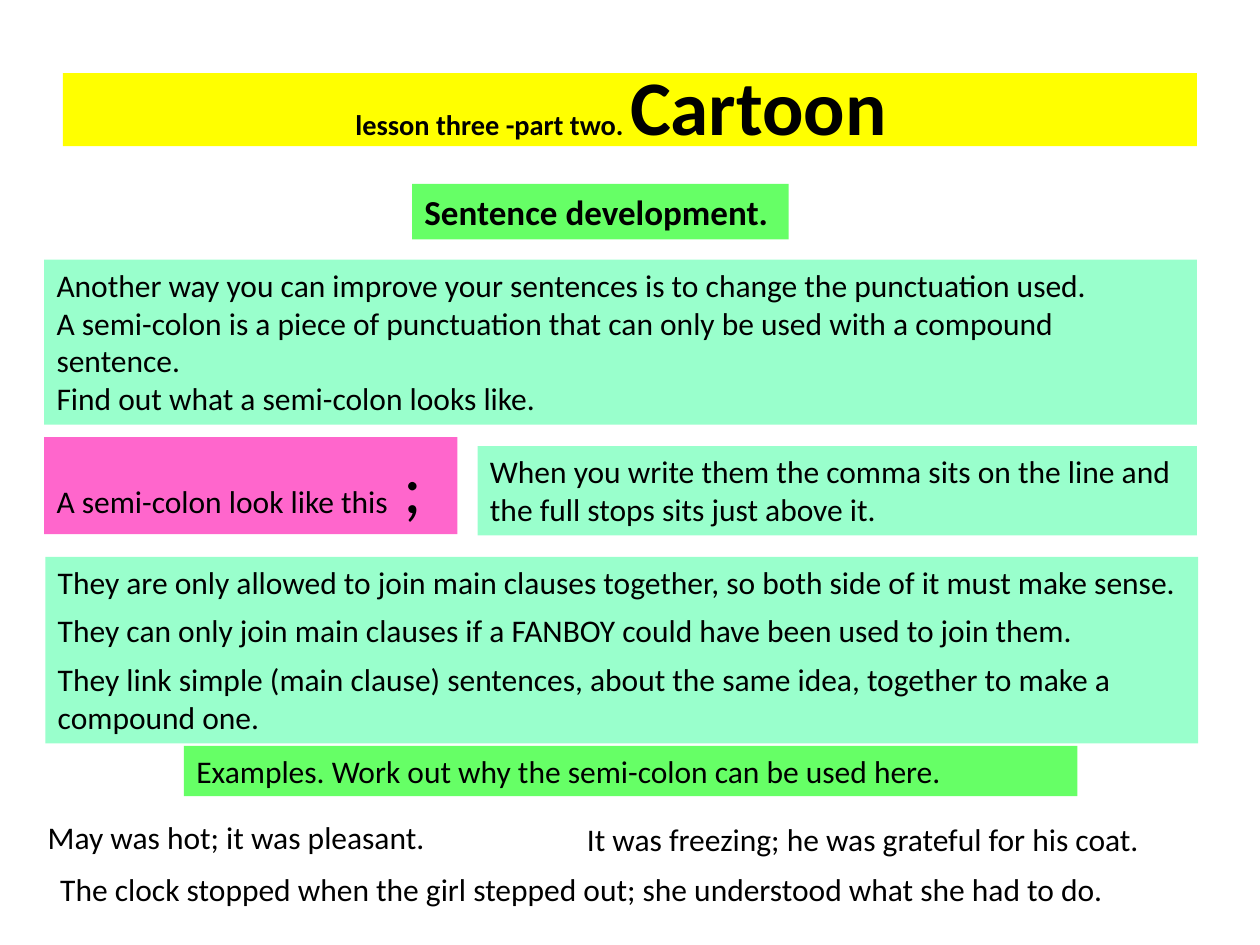
from dataclasses import dataclass
from typing import Optional

from pptx import Presentation
from pptx.dml.color import RGBColor
from pptx.enum.shapes import MSO_SHAPE
from pptx.enum.text import MSO_ANCHOR, PP_ALIGN
from pptx.slide import Slide
from pptx.util import Inches, Pt

SLIDE_WIDTH, SLIDE_HEIGHT = 10, 7.5
COLUMNS, ROWS = 100, 75


@dataclass(frozen=True)
class Theme:
    font: str = "Calibri"
    ink: str = "000000"
    yellow: str = "FFFF00"
    green: str = "66FF66"
    mint: str = "99FFCC"
    pink: str = "FF66CC"
    body: float = 18
    heading: float = 20
    lesson: float = 16.2
    topic: float = 44.1
    symbol: float = 40
    clause_gap: float = 6


THEME = Theme()


@dataclass(frozen=True)
class Phrase:
    text: str
    size: float = THEME.body


@dataclass(frozen=True)
class Panel:
    column: float
    row: float
    columns: float
    rows: float
    paragraphs: tuple[tuple[Phrase, ...], ...]
    fill: Optional[str] = None
    bold: bool = False
    centred: bool = False
    gap: float = 0
    bottom_inset: float = 0.05


def lines(*texts: str, size: float = THEME.body) -> tuple[tuple[Phrase, ...], ...]:
    return tuple((Phrase(text, size),) for text in texts)


PANELS = (
    Panel(5, 5.8, 90, 5.8,
          ((Phrase("lesson three -part two. ", THEME.lesson),
            Phrase("Cartoon ", THEME.topic)),),
          THEME.yellow, bold=True, centred=True, bottom_inset=0.13),
    Panel(32.7, 14.6, 29.9, 4.4,
          lines("Sentence development.", size=THEME.heading),
          THEME.green, bold=True),
    Panel(3.5, 20.6, 91.5, 13.1, lines(
        "Another way you can improve your sentences is to change the punctuation used.",
        "A semi-colon is a piece of punctuation that can only be used with a compound sentence.",
        "Find out what a semi-colon looks like."), THEME.mint),
    Panel(3.5, 34.7, 32.8, 7.7,
          ((Phrase("A semi-colon look like this"), Phrase(" ;", THEME.symbol)),),
          THEME.pink),
    Panel(37.9, 35.4, 57.1, 7.1, lines(
        "When you write them the comma sits on the line and "
        "the full stops sits just above it."), THEME.mint),
    Panel(3.6, 44.2, 91.5, 14.8, lines(
        "They are only allowed to join main clauses together, so both side of it must make sense.",
        "They can only join main clauses if a FANBOY could have been used to join them.",
        "They link simple (main clause) sentences, about the same idea, "
        "together to make a compound one."), THEME.mint, gap=THEME.clause_gap),
    Panel(14.6, 59.2, 70.9, 4,
          lines("Examples. Work out why the semi-colon can be used here."), THEME.green),
    Panel(2.8, 64.4, 42.6, 4, lines("May was hot; it was pleasant.")),
    Panel(45.6, 64.6, 51.3, 4, lines("It was freezing; he was grateful for his coat.")),
    Panel(3.8, 68.6, 91.3, 4, lines(
        "The clock stopped when the girl stepped out; she understood what she had to do.")),
)


def add_phrase(paragraph, text: str, *, size: float, bold: bool = False) -> None:
    run = paragraph.add_run()
    run.text = text
    run.font.name = THEME.font
    run.font.size = Pt(size)
    run.font.bold = bold
    run.font.color.rgb = RGBColor.from_string(THEME.ink)


def draw_panel(slide: Slide, panel: Panel) -> None:
    bounds = (
        Inches(panel.column * SLIDE_WIDTH / COLUMNS),
        Inches(panel.row * SLIDE_HEIGHT / ROWS),
        Inches(panel.columns * SLIDE_WIDTH / COLUMNS),
        Inches(panel.rows * SLIDE_HEIGHT / ROWS),
    )
    if panel.fill:
        box = slide.shapes.add_shape(MSO_SHAPE.RECTANGLE, *bounds)
        box.shadow.inherit = False
        box.fill.solid()
        box.fill.fore_color.rgb = RGBColor.from_string(panel.fill)
        box.line.fill.background()
    else:
        box = slide.shapes.add_textbox(*bounds)

    frame = box.text_frame
    frame.word_wrap = True
    frame.vertical_anchor = MSO_ANCHOR.MIDDLE if panel.centred else MSO_ANCHOR.TOP
    frame.margin_bottom = Inches(panel.bottom_inset)
    for index, phrases in enumerate(panel.paragraphs):
        paragraph = frame.add_paragraph() if index else frame.paragraphs[0]
        paragraph.alignment = PP_ALIGN.CENTER if panel.centred else PP_ALIGN.LEFT
        paragraph.space_before = Pt(panel.gap if index else 0)
        for phrase in phrases:
            add_phrase(paragraph, phrase.text, size=phrase.size, bold=panel.bold)


def main() -> None:
    presentation = Presentation()
    presentation.slide_width = Inches(SLIDE_WIDTH)
    presentation.slide_height = Inches(SLIDE_HEIGHT)
    slide = presentation.slides.add_slide(presentation.slide_layouts[6])
    for panel in PANELS:
        draw_panel(slide, panel)
    presentation.save("out.pptx")


if __name__ == "__main__":
    main()
